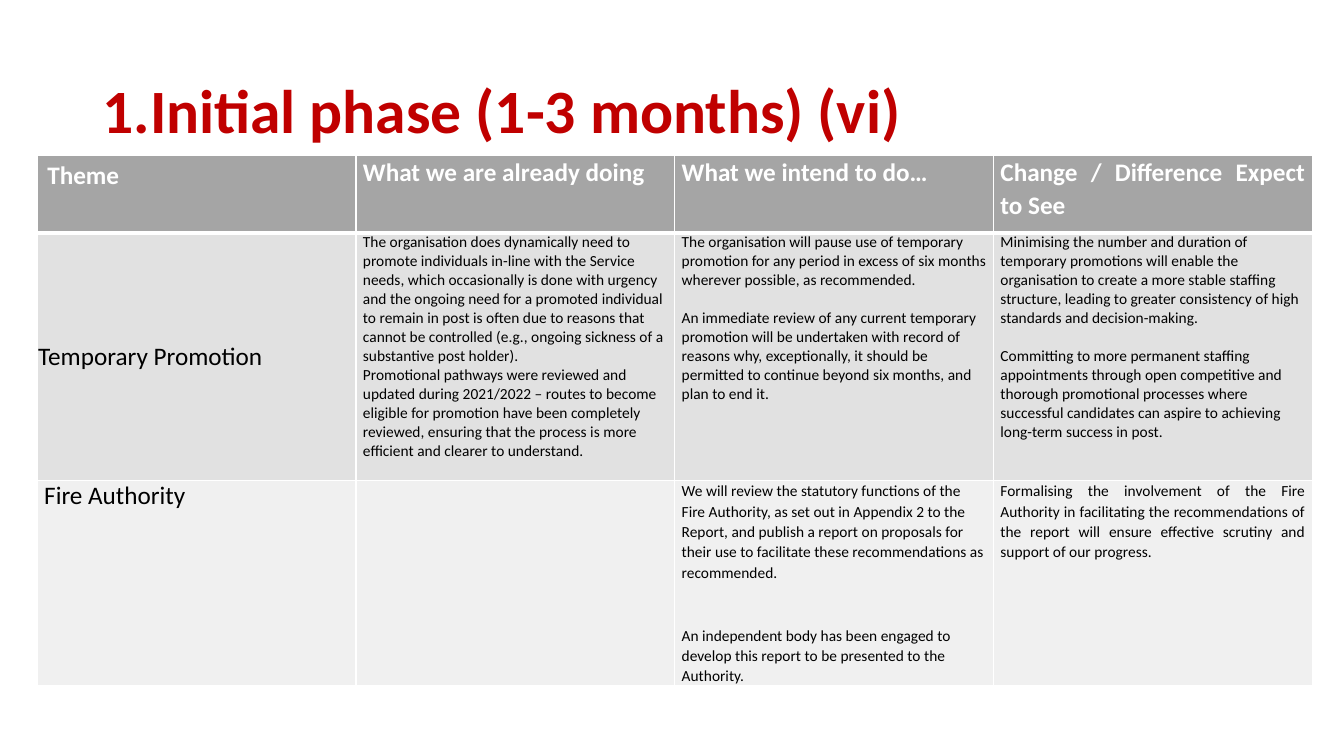
from lxml import etree
from pptx import Presentation
from pptx.dml.color import RGBColor
from pptx.enum.text import MSO_ANCHOR as Anchor, MSO_AUTO_SIZE as AutoSize, PP_ALIGN as Align
from pptx.oxml import parse_xml
from pptx.oxml.ns import nsdecls
from pptx.util import Pt


def color(hex_string):
    return RGBColor.from_string(hex_string)


def add_text(para, text, size, hex_string, bold=False):
    span = para.add_run()
    span.text = text
    span.font.name = "Calibri"
    span.font.size = Pt(size)
    span.font.bold = bold
    span.font.color.rgb = color(hex_string)


deck = Presentation()
deck.slide_width, deck.slide_height = Pt(960), Pt(540)
page = deck.slides.add_slide(deck.slide_layouts[5])

# Title
title = page.shapes.title
title.left, title.top, title.width, title.height = Pt(66), Pt(28.75), Pt(828), Pt(104.4)
frame = title.text_frame
frame.auto_size = AutoSize.NONE
frame.word_wrap = True
frame.vertical_anchor = Anchor.MIDDLE
heading = frame.paragraphs[0]
heading.alignment = Align.LEFT
heading.line_spacing = 0.9
add_text(heading, "1.Initial phase (1-3 months) (vi)", 44, "C00000", True)

# Table wording: one list of paragraphs per cell
rows = [
    [
        ["Theme"],
        ["What we are already doing"],
        ["What we intend to do…"],
        ["Change / Difference Expect to See"],
    ],
    [
        ["Temporary Promotion"],
        ["The organisation does dynamically need to promote individuals in-line with the Service "
         "needs, which occasionally is done with urgency and the ongoing need for a promoted "
         "individual to remain in post is often due to reasons that cannot be controlled (e.g., "
         "ongoing sickness of a substantive post holder).",
         "Promotional pathways were reviewed and updated during 2021/2022 – routes to become "
         "eligible for promotion have been completely reviewed, ensuring that the process is more "
         "efficient and clearer to understand."],
        ["The organisation will pause use of temporary promotion for any period in excess of six "
         "months wherever possible, as recommended.",
         "An immediate review of any current temporary promotion will be undertaken with record of "
         "reasons why, exceptionally, it should be permitted to continue beyond six months, and "
         "plan to end it."],
        ["Minimising the number and duration of temporary promotions will enable the organisation "
         "to create a more stable staffing structure, leading to greater consistency of high "
         "standards and decision-making.",
         "Committing to more permanent staffing appointments through open competitive and thorough "
         "promotional processes where successful candidates can aspire to achieving long-term "
         "success in post."],
    ],
    [
        ["Fire Authority"],
        [],
        ["We will review the statutory functions of the Fire Authority, as set out in Appendix 2 "
         "to the Report, and publish a report on proposals for their use to facilitate these "
         "recommendations as recommended.",
         "An independent body has been engaged to develop this report to be presented to the "
         "Authority."],
        ["Formalising the involvement of the Fire Authority in facilitating the recommendations of "
         "the report will ensure effective scrutiny and support of our progress."],
    ],
]
row_heights = [55.4, 177, 146.5]
row_fills = ["A5A5A5", "E1E1E1", "F0F0F0"]
paragraph_gaps = {(1, 2): 13.4, (1, 3): 13.4, (2, 2): 30.5}
justified = {(0, 1), (0, 2), (0, 3), (2, 3)}
special_insets = {(0, 0): (7.2, 3.6), (1, 0): (0.7, 0.5)}

# Table grid
table = page.shapes.add_table(3, 4, Pt(26.6), Pt(111), Pt(910.8), Pt(378.9)).table
table.horz_banding = False
for column in table.columns:
    column.width = Pt(227.7)

# Table cells
for r, row in enumerate(rows):
    table.rows[r].height = Pt(row_heights[r])
    for c, texts in enumerate(row):
        cell = table.cell(r, c)
        cell.fill.solid()
        cell.fill.fore_color.rgb = color(row_fills[r])
        side, top = special_insets.get((r, c), (5, 0))
        cell.margin_left = cell.margin_right = Pt(side)
        cell.margin_top, cell.margin_bottom = Pt(top), Pt(0)
        cell.vertical_anchor = Anchor.MIDDLE if (r, c) == (1, 0) else Anchor.TOP

        # White borders, thicker under the header
        widths = {"lnL": 1, "lnR": 1, "lnT": 3 if r == 1 else 1, "lnB": 3 if r == 0 else 1}
        for place, (tag, width) in enumerate(widths.items()):
            border = parse_xml(
                f'<a:{tag} {nsdecls("a")} w="{Pt(width)}"><a:solidFill>'
                f'<a:srgbClr val="FFFFFF"/></a:solidFill></a:{tag}>')
            cell._tc.get_or_add_tcPr().insert(place, border)

        # Paragraphs
        for index, text in enumerate(texts):
            para = cell.text_frame.paragraphs[0] if index == 0 else cell.text_frame.add_paragraph()
            para.alignment = Align.JUSTIFY if (r, c) in justified else Align.LEFT
            if c > 0 and r != 1:
                para.line_spacing = 1.07
            if index > 0:
                para.space_before = Pt(paragraph_gaps.get((r, c), 0))
            size = 18 if r == 0 or c == 0 else 11
            add_text(para, text, size, "FFFFFF" if r == 0 else "000000", r == 0)

deck.save("out.pptx")
